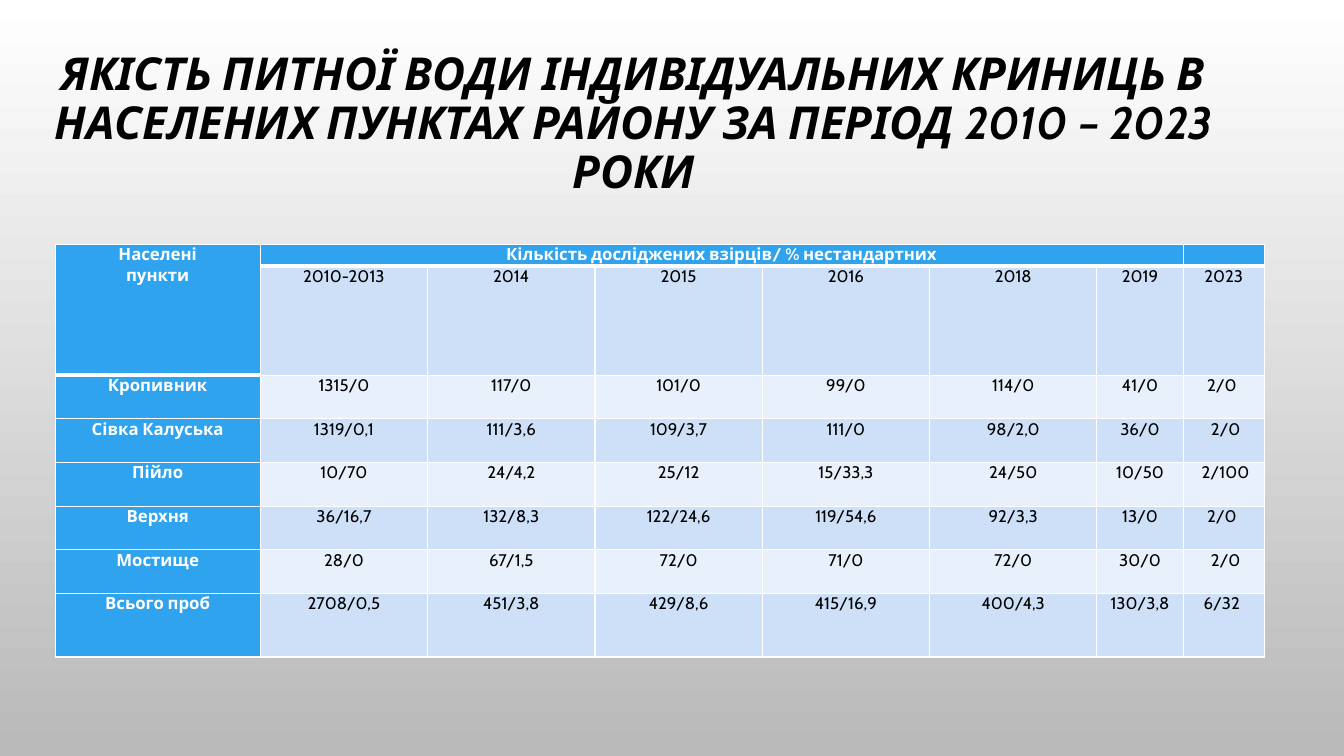
"""Build the slide on drinking water quality in the wells of the district."""
import dataclasses
import typing

import lxml.etree
import pptx
import pptx.dml.color
import pptx.enum.text
import pptx.oxml.ns
import pptx.util


@dataclasses.dataclass(frozen=True)
class Theme:
    font: str = "Cabin"
    title_size: float = 32.4
    table_size: float = 12
    dark: str = "000000"
    white: str = "FFFFFF"
    shade: str = "B9B9B9"
    header: str = "2FA3EE"
    band: str = "CDE0F8"
    light_band: str = "E8F0FC"
    thin_line: float = 1
    thick_line: float = 3


@dataclasses.dataclass(frozen=True)
class Area:
    left: float
    top: float
    width: float
    height: float


class Settlement(typing.NamedTuple):
    name: str
    samples: tuple[str, ...]


THEME = Theme()
SLIDE_WIDTH = pptx.util.Inches(13.33)
SLIDE_HEIGHT = pptx.util.Inches(7.5)

TITLE = "ЯКІСТЬ ПИТНОЇ ВОДИ ІНДИВІДУАЛЬНИХ КРИНИЦЬ В НАСЕЛЕНИХ ПУНКТАХ РАЙОНУ ЗА ПЕРІОД 2010 – 2023 РОКИ"
NAME_HEADING = "Населені\nпункти"
SAMPLES_HEADING = "Кількість досліджених взірців/ % нестандартних"
YEARS = ("2010-2013", "2014", "2015", "2016", "2018", "2019", "2023")
SETTLEMENTS = (
    Settlement("Кропивник", ("1315/0", "117/0", "101/0", "99/0", "114/0", "41/0", "2/0 ")),
    Settlement("Сівка Калуська", ("1319/0,1", "111/3,6", "109/3,7", "111/0", "98/2,0", "36/0", " 2/0")),
    Settlement("Пійло", ("10/70", "24/4,2", "25/12", "15/33,3", "24/50", "10/50", " 2/100")),
    Settlement("Верхня", ("36/16,7", "132/8,3", "122/24,6", "119/54,6", "92/3,3", "13/0", "2/0 ")),
    Settlement("Мостище", ("28/0", "67/1,5", "72/0", "71/0", "72/0", "30/0", " 2/0")),
    Settlement("Всього проб", ("2708/0,5", "451/3,8", "429/8,6", "415/16,9", "400/4,3", "130/3,8", "6/32 ")),
)

COLUMN_SHARES = (15.27, *[12.45] * 5, 6.42, 6.03)
ROW_SHARES = (2.9, 14.42, *[5.78] * 5, 8.4)
TITLE_AREA = Area(1.8, 7.33, 90.7, 24.93)
TABLE_AREA = Area(4.1, 32.3, sum(COLUMN_SHARES), sum(ROW_SHARES))


def across(share: float) -> int:
    """Turn a percentage of the slide width into a length."""
    return round(SLIDE_WIDTH * share / 100)


def down(share: float) -> int:
    """Turn a percentage of the slide height into a length."""
    return round(SLIDE_HEIGHT * share / 100)


def color(value: str) -> pptx.dml.color.RGBColor:
    """Turn a hexadecimal value into a colour."""
    return pptx.dml.color.RGBColor.from_string(value)


def write_text(text_frame, text: str, *, size: float, fill: str, bold: bool = False,
               italic: bool = False, spacing: float = 1.0) -> None:
    """Write centred paragraphs, one for each line of the text."""
    for index, line in enumerate(text.split("\n")):
        paragraph = text_frame.add_paragraph() if index else text_frame.paragraphs[0]
        paragraph.alignment = pptx.enum.text.PP_ALIGN.CENTER
        paragraph.line_spacing = spacing
        if not line:
            lxml.etree.SubElement(paragraph._p, pptx.oxml.ns.qn("a:endParaRPr"), sz=str(round(size * 100)))
            continue
        run = paragraph.add_run()
        run.text = line
        run.font.name = THEME.font
        run.font.size = pptx.util.Pt(size)
        run.font.bold = bold
        run.font.italic = italic
        run.font.color.rgb = color(fill)


def draw_borders(cell, bottom_width: float) -> None:
    """Give a cell white borders on its four sides."""
    properties = cell._tc.get_or_add_tcPr()
    for index, side in enumerate(("lnL", "lnR", "lnT", "lnB")):
        width = bottom_width if side == "lnB" else THEME.thin_line
        line = lxml.etree.Element(pptx.oxml.ns.qn(f"a:{side}"), w=str(pptx.util.Pt(width)))
        solid = lxml.etree.SubElement(line, pptx.oxml.ns.qn("a:solidFill"))
        lxml.etree.SubElement(solid, pptx.oxml.ns.qn("a:srgbClr"), val=THEME.white)
        properties.insert(index, line)


def format_cell(cell, text: str, row: int, column: int) -> None:
    """Fill, border and write one cell according to its place."""
    is_header = row == 0 or column == 0
    cell.margin_left = cell.margin_right = pptx.util.Inches(0.07)
    cell.margin_top = cell.margin_bottom = 0
    cell.fill.solid()
    cell.fill.fore_color.rgb = color(THEME.header if is_header else THEME.band if row % 2 else THEME.light_band)
    ends_heading = row == 0 or (row == 1 and column == 0)
    draw_borders(cell, THEME.thick_line if ends_heading else THEME.thin_line)
    write_text(cell.text_frame, text, size=THEME.table_size, bold=is_header,
               fill=THEME.white if is_header else THEME.dark)


def paint_background(slide) -> None:
    """Shade the slide from white at the top to grey at the bottom."""
    fill = slide.background.fill
    fill.gradient()
    fill.gradient_angle = 270
    for stop, value in zip(fill.gradient_stops, (THEME.white, THEME.shade)):
        stop.color.rgb = color(value)


def place_title(slide, area: Area) -> None:
    """Move the title placeholder and write the title."""
    title = slide.shapes.title
    title.left, title.top = across(area.left), down(area.top)
    title.width, title.height = across(area.width), down(area.height)
    text_frame = title.text_frame
    text_frame.word_wrap = True
    text_frame.auto_size = pptx.enum.text.MSO_AUTO_SIZE.NONE
    text_frame.vertical_anchor = pptx.enum.text.MSO_ANCHOR.MIDDLE
    text_frame.margin_top = 0
    text_frame.margin_bottom = pptx.util.Inches(0.5)
    write_text(text_frame, TITLE, size=THEME.title_size, fill=THEME.dark, bold=True, italic=True, spacing=0.9)


def place_table(slide, area: Area) -> None:
    """Draw the table of samples by settlement and year."""
    contents = [
        (NAME_HEADING, SAMPLES_HEADING, *[""] * 6),
        ("", *YEARS),
        *[(settlement.name, *settlement.samples) for settlement in SETTLEMENTS],
    ]
    table = slide.shapes.add_table(len(ROW_SHARES), len(COLUMN_SHARES), across(area.left), down(area.top),
                                   across(area.width), down(area.height)).table
    table.first_row = table.horz_banding = False
    for column, share in zip(table.columns, COLUMN_SHARES):
        column.width = across(share)
    for row, share in zip(table.rows, ROW_SHARES):
        row.height = down(share)
    for row_index, texts in enumerate(contents):
        for column_index, text in enumerate(texts):
            format_cell(table.cell(row_index, column_index), text, row_index, column_index)
    table.cell(0, 0).merge(table.cell(1, 0))
    table.cell(0, 1).merge(table.cell(0, 6))


def main() -> None:
    """Create the presentation and save it."""
    presentation = pptx.Presentation()
    presentation.slide_width = SLIDE_WIDTH
    presentation.slide_height = SLIDE_HEIGHT
    slide = presentation.slides.add_slide(presentation.slide_layouts[5])
    paint_background(slide)
    place_title(slide, TITLE_AREA)
    place_table(slide, TABLE_AREA)
    presentation.save("out.pptx")


if __name__ == "__main__":
    main()
